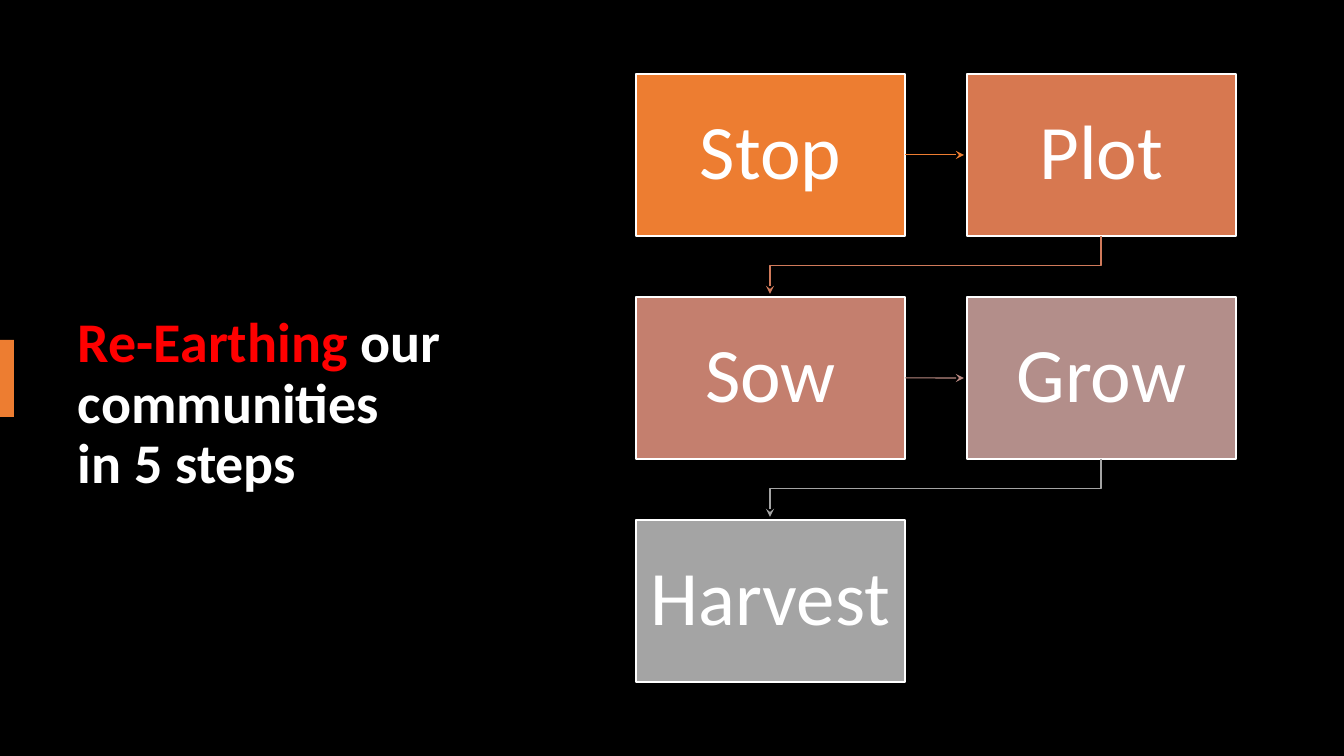
from dataclasses import dataclass

from lxml import etree
from pptx import Presentation
from pptx.dml.color import RGBColor
from pptx.enum.shapes import MSO_CONNECTOR, MSO_SHAPE
from pptx.enum.text import MSO_ANCHOR, PP_ALIGN
from pptx.oxml.ns import qn
from pptx.util import Pt

RECT = MSO_SHAPE.RECTANGLE
STRAIGHT = MSO_CONNECTOR.STRAIGHT
MIDDLE = MSO_ANCHOR.MIDDLE
CENTER = PP_ALIGN.CENTER
RIGHT_SIDE = 3
SCALE = 914400 / 100.8


@dataclass(frozen=True)
class Theme:
    font: str = "Calibri"
    title_size: int = 40
    step_size: int = 55
    back: str = "000000"
    text: str = "FFFFFF"
    highlight: str = "FF0000"
    accent: str = "ED7D31"
    steps: tuple = ("ED7D31", "D77850", "C47F6E", "B38E8A", "A4A4A4")
    arrows: tuple = ("ED7D31", "D07A5B", "B88881", "A4A4A4")


def px(n):
    return round(n * SCALE)


def rgb(color):
    return RGBColor.from_string(color)


class Deck:
    """Draws themed elements on the current slide, with lengths in px."""

    def __init__(self, theme, width, height):
        self.theme = theme
        self.prs = Presentation()
        self.prs.slide_width, self.prs.slide_height = px(width), px(height)
        self.s = self.prs.slides.add_slide(self.prs.slide_layouts[6])

    def rect(self, x, y, w, h, color):
        sp = self.s.shapes.add_shape(RECT, px(x), px(y), px(w), px(h))
        sp.shadow.inherit = False
        sp.fill.solid()
        sp.fill.fore_color.rgb = rgb(color)
        sp.line.fill.background()
        return sp

    def frame(self, sp, inset_x, inset_y, size, bold=False):
        tf = sp.text_frame
        tf.word_wrap = True
        tf.vertical_anchor = MIDDLE
        tf.margin_left = tf.margin_right = px(inset_x)
        tf.margin_top = tf.margin_bottom = px(inset_y)
        p = tf.paragraphs[0]
        p.line_spacing = 0.9
        p.font.name, p.font.size, p.font.bold = self.theme.font, Pt(size), bold
        return p

    def run(self, p, text, color):
        r = p.add_run()
        r.text = text
        r.font.color.rgb = rgb(color)

    def title(self, x, y, w, h, lead, rest, last):
        sp = self.s.shapes.add_textbox(px(x), px(y), px(w), px(h))
        p = self.frame(sp, 10, 5, self.theme.title_size, bold=True)
        self.run(p, lead, self.theme.highlight)
        self.run(p, rest, self.theme.text)
        p.add_line_break()
        self.run(p, last, self.theme.text)

    def step(self, x, y, w, h, text, color):
        sp = self.rect(x, y, w, h, color)
        sp.line.color.rgb = rgb(self.theme.text)
        sp.line.width = Pt(1)
        p = self.frame(sp, 13, 14, self.theme.step_size)
        p.alignment = CENTER
        self.run(p, text, self.theme.text)
        return sp

    def arrow_line(self, sp, color):
        sp.line.color.rgb = rgb(color)
        sp.line.width = Pt(0.75)
        ln = sp.line._get_or_add_ln()
        etree.SubElement(ln, qn("a:tailEnd"), type="stealth")

    def arrow(self, box, x1, x2, y, color):
        c = self.s.shapes.add_connector(STRAIGHT, px(x1), px(y), px(x2), px(y))
        c.begin_connect(box, RIGHT_SIDE)
        self.arrow_line(c, color)
        etree.SubElement(c._element.spPr, qn("a:effectLst"))

    def elbow(self, points, color):
        start, *rest = points
        fb = self.s.shapes.build_freeform(*start, scale=SCALE)
        fb.add_line_segments(rest, close=False)
        sp = fb.convert_to_shape()
        sp.fill.background()
        self.arrow_line(sp, color)
        sp.shadow.inherit = False


def main():
    theme = Theme()
    deck = Deck(theme, 1344, 756)
    deck.rect(0, 0, 1344, 756, theme.back)
    deck.title(68, 128, 488, 554, "Re-Earthing", " our communities", "in 5 steps")
    deck.rect(0, 340, 14, 77, theme.accent)

    left, top, w, h = 636, 74, 269, 162
    col_pitch, row_pitch, tip_gap = 331, 223, 3
    row_gap = row_pitch - h
    names = ("Stop", "Plot", "Sow", "Grow", "Harvest")
    for i, (name, color) in enumerate(zip(names, theme.steps)):
        row, col = divmod(i, 2)
        x, y = left + col * col_pitch, top + row * row_pitch
        box = deck.step(x, y, w, h, name, color)
        if i == len(names) - 1:
            break
        if col == 0:
            deck.arrow(box, x + w, x + col_pitch - tip_gap, y + h // 2, theme.arrows[i])
        else:
            start, end, bottom = x + w // 2, left + w // 2, y + h
            bend = bottom + row_gap // 2
            tip = bottom + row_gap - tip_gap
            deck.elbow([(start, bottom), (start, bend), (end, bend), (end, tip)],
                       theme.arrows[i])

    deck.prs.save("out.pptx")


if __name__ == "__main__":
    main()
